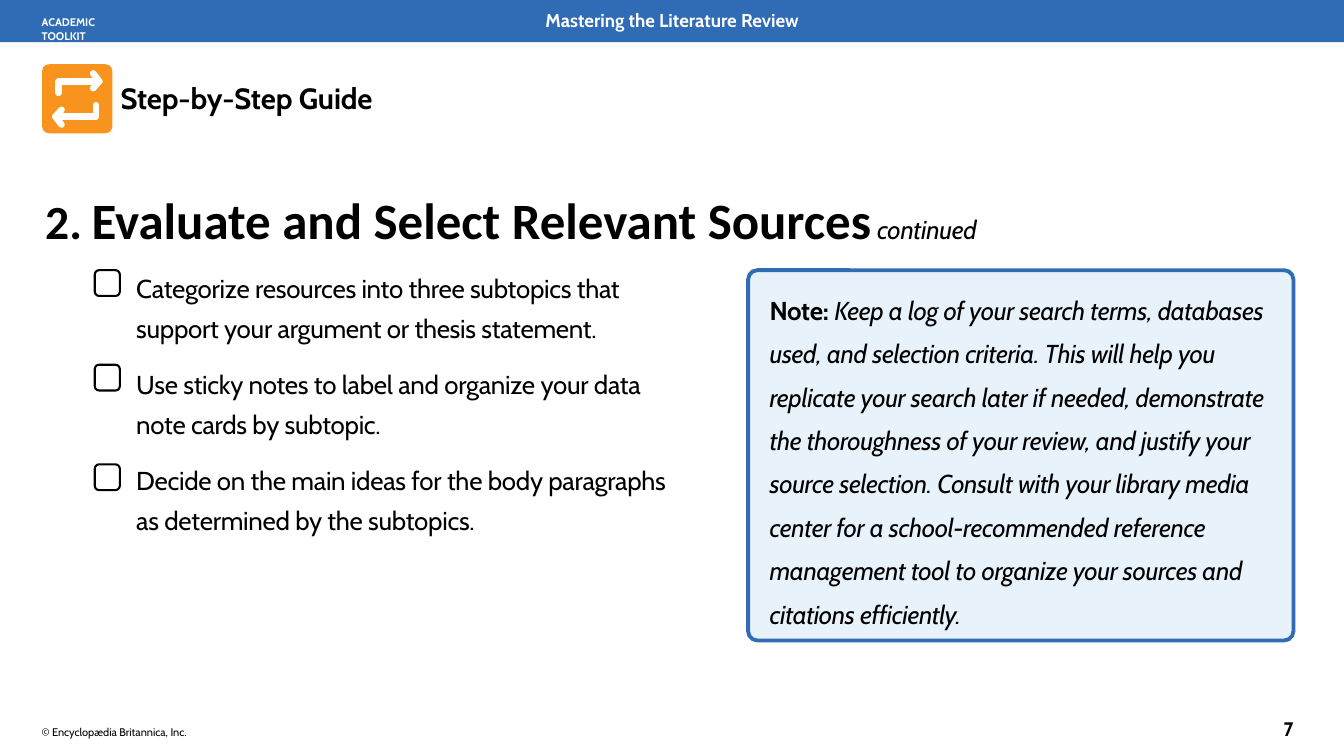
from pptx import Presentation
from pptx.dml.color import RGBColor
from pptx.enum.shapes import MSO_SHAPE
from pptx.enum.text import MSO_ANCHOR, MSO_AUTO_SIZE, PP_ALIGN
from pptx.oxml.ns import qn
from pptx.util import Cm, Pt
from lxml import etree

RECT, ROUND = MSO_SHAPE.RECTANGLE, MSO_SHAPE.ROUNDED_RECTANGLE
TOP, NO_FIT = MSO_ANCHOR.TOP, MSO_AUTO_SIZE.NONE
LEFT, CENTER = PP_ALIGN.LEFT, PP_ALIGN.CENTER

BLACK, WHITE, BLUE, ORANGE = "000000", "FFFFFF", "306CB5", "F8941D"
NOTE_FILL, NOTE_LINE = "E8F2FB", "306BB4"

BODY = {"size": 30.5}
STEPS = [
    "Categorize resources into three subtopics that support your argument or thesis statement.",
    "Use sticky notes to label and organize your data note cards by subtopic.",
    "Decide on the main ideas for the body paragraphs as determined by the subtopics.",
]
CHECKBOX_TOPS = [11.23, 15.16, 19.3]
NOTE = (
    "\u00a0Keep a log of your search terms, databases used, and selection criteria. "
    "This will help you replicate your search later if needed, demonstrate the "
    "thoroughness of your review, and justify your source selection. Consult with "
    "your library media center for a school-recommended reference management tool "
    "to organize your sources and citations efficiently."
)


def rgb(color):
    return RGBColor.from_string(color)


def add_run(p, text, size, color=BLACK, spacing=0, **fmt):
    r = p.add_run()
    r.text = text
    r.font.size = Pt(size)
    r.font.color.rgb = rgb(color)
    for name, value in {"name": "Cabin", "bold": False, "italic": False, **fmt}.items():
        setattr(r.font, name, value)
    if spacing:
        r.font._element.set("spc", str(round(spacing * 100)))


def format_paragraph(p, margin=0, indent=0, **fmt):
    """Set margins in centimetres, no bullet, and any paragraph attributes."""
    pPr = p._p.get_or_add_pPr()
    pPr.set("marL", str(Cm(margin)))
    pPr.set("indent", str(Cm(indent)))
    etree.SubElement(pPr, qn("a:buNone"))
    for name, value in {"alignment": LEFT, "space_before": Pt(0), **fmt}.items():
        setattr(p, name, value)


def format_frame(tf, left=0.25, top=0.13):
    values = {"word_wrap": True, "auto_size": NO_FIT, "vertical_anchor": TOP,
              "margin_left": Cm(left), "margin_right": Cm(left),
              "margin_top": Cm(top), "margin_bottom": Cm(0)}
    for name, value in values.items():
        setattr(tf, name, value)
    return tf


def place(sp, x, y, w, h):
    sp.left, sp.top, sp.width, sp.height = Cm(x), Cm(y), Cm(w), Cm(h)


def add_label(s, box, text, size, align=LEFT, **fmt):
    sp = s.shapes.add_textbox(*map(Cm, box))
    p = format_frame(sp.text_frame, left=0, top=0.05).paragraphs[0]
    format_paragraph(p, margin=0.03, alignment=align)
    add_run(p, text, size, **fmt)


def add_box(s, kind, box, fill=None, line=None, width=0, radius=0):
    sp = s.shapes.add_shape(kind, *map(Cm, box))
    sp.shadow.inherit = False
    if kind == ROUND:
        sp.adjustments[0] = radius
    if fill:
        sp.fill.solid()
        sp.fill.fore_color.rgb = rgb(fill)
    else:
        sp.fill.background()
    if line:
        sp.line.color.rgb = rgb(line)
        sp.line.width = Pt(width)
    else:
        sp.line.fill.background()
    return sp


def add_stroke(s, points):
    """Draw an open white line with round ends and corners."""
    corners = [(Cm(x), Cm(y)) for x, y in points]
    builder = s.shapes.build_freeform(*corners[0])
    builder.add_line_segments(corners[1:], close=False)
    sp = builder.convert_to_shape()
    sp.shadow.inherit = False
    sp.fill.background()
    sp.line.color.rgb = rgb(WHITE)
    sp.line.width = Pt(7.6)
    ln = sp.line._get_or_add_ln()
    ln.set("cap", "rnd")
    etree.SubElement(ln, qn("a:round"))


def add_cycle_icon(s):
    add_box(s, ROUND, (1.75, 2.67, 2.92, 2.87), fill=ORANGE, radius=0.1)
    shaft = [(2.44, 3.86), (2.44, 3.38), (4.13, 3.38)]
    head = [(3.87, 3.05), (4.13, 3.38), (3.87, 3.67)]
    for stroke in (shaft, head):
        add_stroke(s, stroke)
        add_stroke(s, [(6.43 - x, 8.23 - y) for x, y in stroke])


def fill_title(sp):
    place(sp, 1.63, 7.7, 52.12, 2.82)
    p = format_frame(sp.text_frame).paragraphs[0]
    format_paragraph(p, margin=1.93, indent=-1.93)
    add_run(p, "2.\t", 56, name="Calibri", bold=True)
    add_run(p, "Evaluate and Select Relevant Sources", 60, name="Calibri", bold=True)
    add_run(p, " continued", **BODY, spacing=-0.3, italic=True)


def fill_steps(sp):
    place(sp, 1.65, 10.8, 26.8, 11.5)
    tf = format_frame(sp.text_frame)
    for i, step in enumerate(STEPS):
        p = tf.add_paragraph() if i else tf.paragraphs[0]
        format_paragraph(p, margin=3.76, line_spacing=1.3,
                         space_before=Pt(18 if i else 0))
        add_run(p, step, **BODY, spacing=-0.3)


def add_note(s):
    sp = add_box(s, ROUND, (31.09, 11.23, 22.66, 15.39), fill=NOTE_FILL,
                 line=NOTE_LINE, width=4.5, radius=0.025)
    p = format_frame(sp.text_frame, left=0.78, top=0.37).paragraphs[0]
    format_paragraph(p, line_spacing=1.4)
    add_run(p, "Note:", **BODY, spacing=-0.4, bold=True)
    add_run(p, NOTE, **BODY, spacing=-0.4, italic=True)


def main():
    prs = Presentation()
    prs.slide_width, prs.slide_height = Cm(55.85), Cm(31.42)
    s = prs.slides.add_slide(prs.slide_layouts[1])
    title, body = s.placeholders

    add_box(s, RECT, (0, 0, 55.85, 1.75), fill=BLUE)
    add_label(s, (19.66, 0.33, 16.51, 0.99), "Mastering the Literature Review", 22,
              align=CENTER, color=WHITE, bold=True)
    add_label(s, (1.7, 0.61, 3, 1.1), "ACADEMIC TOOLKIT", 13, color=WHITE, bold=True)
    add_cycle_icon(s)
    add_label(s, (4.98, 3.3, 10.72, 1.55), "Step-by-Step Guide", 34.5,
              spacing=-0.15, bold=True)

    fill_title(title)
    fill_steps(body)
    for top in CHECKBOX_TOPS:
        add_box(s, ROUND, (3.94, top, 1.04, 1.07), line=BLACK, width=2.47, radius=0.17)
    add_note(s)

    add_label(s, (1.7, 30.12, 6.53, 0.64), "© Encyclopædia Britannica, Inc.", 13)
    add_label(s, (53.31, 29.77, 0.94, 1.04), "7", 23, bold=True)
    prs.save("out.pptx")


if __name__ == "__main__":
    main()
